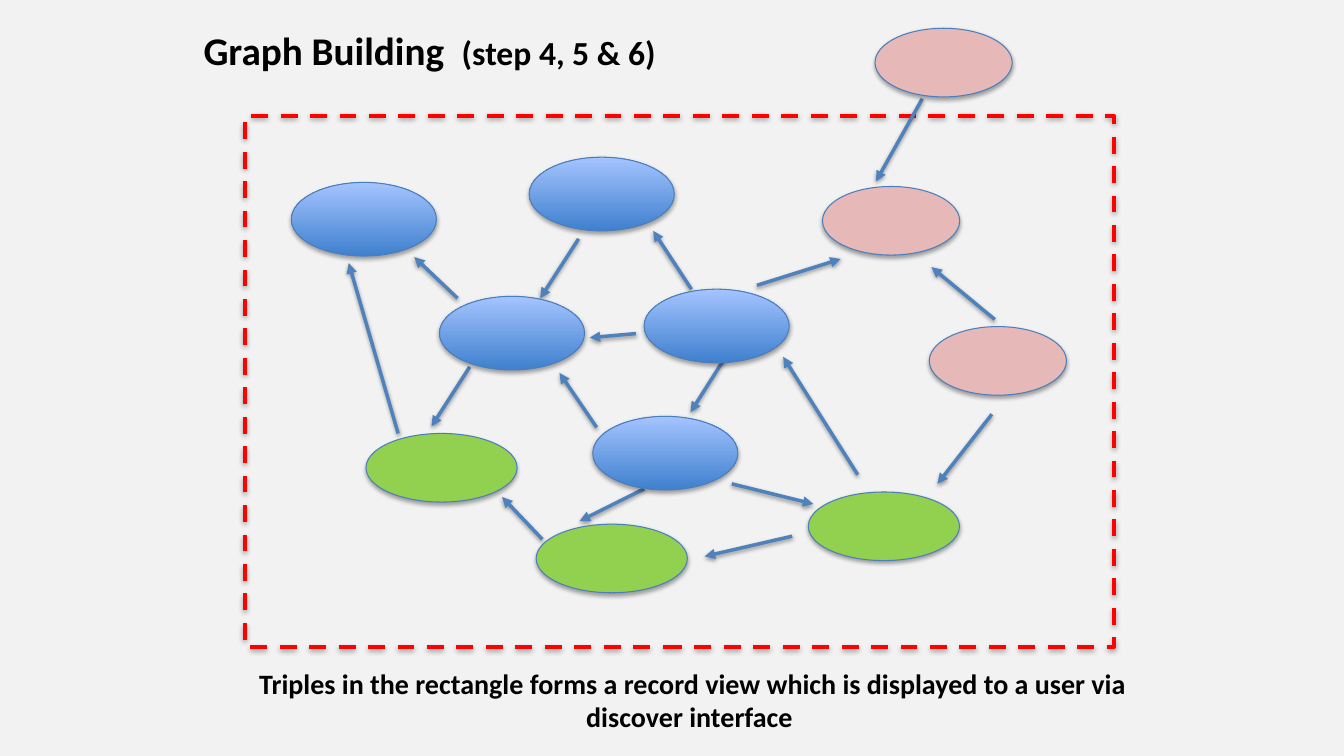
from lxml import etree
from pptx import Presentation
from pptx.dml.color import RGBColor
from pptx.enum.dml import MSO_LINE
from pptx.enum.shapes import MSO_CONNECTOR, MSO_SHAPE
from pptx.enum.text import MSO_ANCHOR, PP_ALIGN
from pptx.oxml.ns import qn
from pptx.util import Pt

OVAL, RECTANGLE = MSO_SHAPE.OVAL, MSO_SHAPE.RECTANGLE
STRAIGHT, DASH = MSO_CONNECTOR.STRAIGHT, MSO_LINE.DASH
TOP, LEFT, CENTER = MSO_ANCHOR.TOP, PP_ALIGN.LEFT, PP_ALIGN.CENTER
TITLE_ONLY = 5


def color(value):
    return RGBColor.from_string(value)


def add_shadow(item, distance, opacity):
    """Cast a soft black shadow straight down; call it after the line is set."""
    effects = etree.SubElement(item._element.spPr, qn("a:effectLst"))
    shadow = etree.SubElement(effects, qn("a:outerShdw"), blurRad=str(Pt(3.1)),
                              dist=str(Pt(distance)), dir="5400000", rotWithShape="0")
    black = etree.SubElement(shadow, qn("a:srgbClr"), val="000000")
    etree.SubElement(black, qn("a:alpha"), val=str(opacity * 1000))


deck = Presentation()
deck.slide_width, deck.slide_height = Pt(960), Pt(540)
page = deck.slides.add_slide(deck.slide_layouts[TITLE_ONLY])
page.background.fill.solid()
page.background.fill.fore_color.rgb = color("F2F2F2")

# Dashed frame around the record view
frame = page.shapes.add_shape(RECTANGLE, Pt(175), Pt(82.8), Pt(620.6), Pt(379.4))
frame.fill.background()
frame.line.color.rgb = color("FF0000")
frame.line.width = Pt(3)
frame.line.dash_style = DASH
add_shadow(frame, 1.8, 35)

# Arrows: start x, start y, end x, end y
arrows = [
    (413.3, 170.6, 385.9, 213.1), (493.9, 206.6, 466.6, 164.9),
    (426.2, 305.3, 399.6, 266.4), (520.6, 251.3, 493.2, 294.5),
    (326.9, 213.1, 295.9, 183.6), (454.3, 238.3, 421.2, 241.2),
    (540.7, 203.8, 600.5, 185), (710.6, 228.2, 665.3, 190.8),
    (708.5, 295.9, 669.6, 345.6), (658.8, 70.6, 625.7, 129.6),
    (522.7, 345.6, 581, 360), (612.7, 339.1, 559.4, 254.9),
    (284.4, 309.6, 249.1, 187.9), (335.5, 262.1, 308.2, 304.6),
    (460.1, 349.2, 414, 372.2), (387.4, 385.2, 358.6, 355),
    (565.9, 383, 503.3, 397.4),
]
for ends in arrows:
    arrow = page.shapes.add_connector(STRAIGHT, *[Pt(value) for value in ends])
    arrow.line.color.rgb = color("4F81BD")
    arrow.line.width = Pt(2.5)
    etree.SubElement(arrow.line._get_or_add_ln(), qn("a:tailEnd"), type="triangle")
    add_shadow(arrow, 1.6, 38)

# Graph nodes: fill colours (two make a gradient), width, height, top-left corners
node_groups = [
    (("3F80CE", "A4C4FF"), 103.7, 52.6,
     [(208.1, 130.3), (378, 112.3), (313.9, 211.7), (460.1, 206.6), (423.4, 297.4)]),
    (("E6B9B8",), 98, 49, [(625, 20.2), (587.5, 133.2), (663.8, 233.3)]),
    (("92D050",), 108, 49, [(261.4, 309.6), (383, 374.4), (577.4, 351.4)]),
]
for fills, width, height, corners in node_groups:
    for left, top in corners:
        node = page.shapes.add_shape(OVAL, Pt(left), Pt(top), Pt(width), Pt(height))
        if len(fills) == 2:
            node.fill.gradient()
            node.fill.gradient_angle = 90
            for stop, shade in zip(node.fill.gradient_stops, fills):
                stop.color.rgb = color(shade)
        else:
            node.fill.solid()
            node.fill.fore_color.rgb = color(fills[0])
        node.line.color.rgb = color("4B7EBC")
        node.line.width = Pt(0.75)
        add_shadow(node, 1.8, 35)

# Title and caption
title = page.shapes.title
title.left, title.top, title.width, title.height = Pt(138.2), Pt(15.1), Pt(396.7), Pt(41)
caption = page.shapes.add_textbox(Pt(175), Pt(472.3), Pt(639.4), Pt(55.4))
texts = [
    (title, LEFT, [("Graph Building", 28), (" ", 28), ("(step 4, 5 & 6)", 24)]),
    (caption, CENTER, [("Triples in the rectangle forms a record view which is "
                        "displayed to a user via discover interface ", 20)]),
]
for box, alignment, spans in texts:
    box.text_frame.word_wrap = True
    box.text_frame.vertical_anchor = TOP
    para = box.text_frame.paragraphs[0]
    para.alignment = alignment
    for wording, size in spans:
        span = para.add_run()
        span.text = wording
        span.font.name = "Calibri"
        span.font.size = Pt(size)
        span.font.bold = True
        span.font.color.rgb = color("000000")

# Widen the gap between the title and its step numbers
title.text_frame.paragraphs[0].runs[1].font._element.set("spc", "630")

deck.save("out.pptx")
